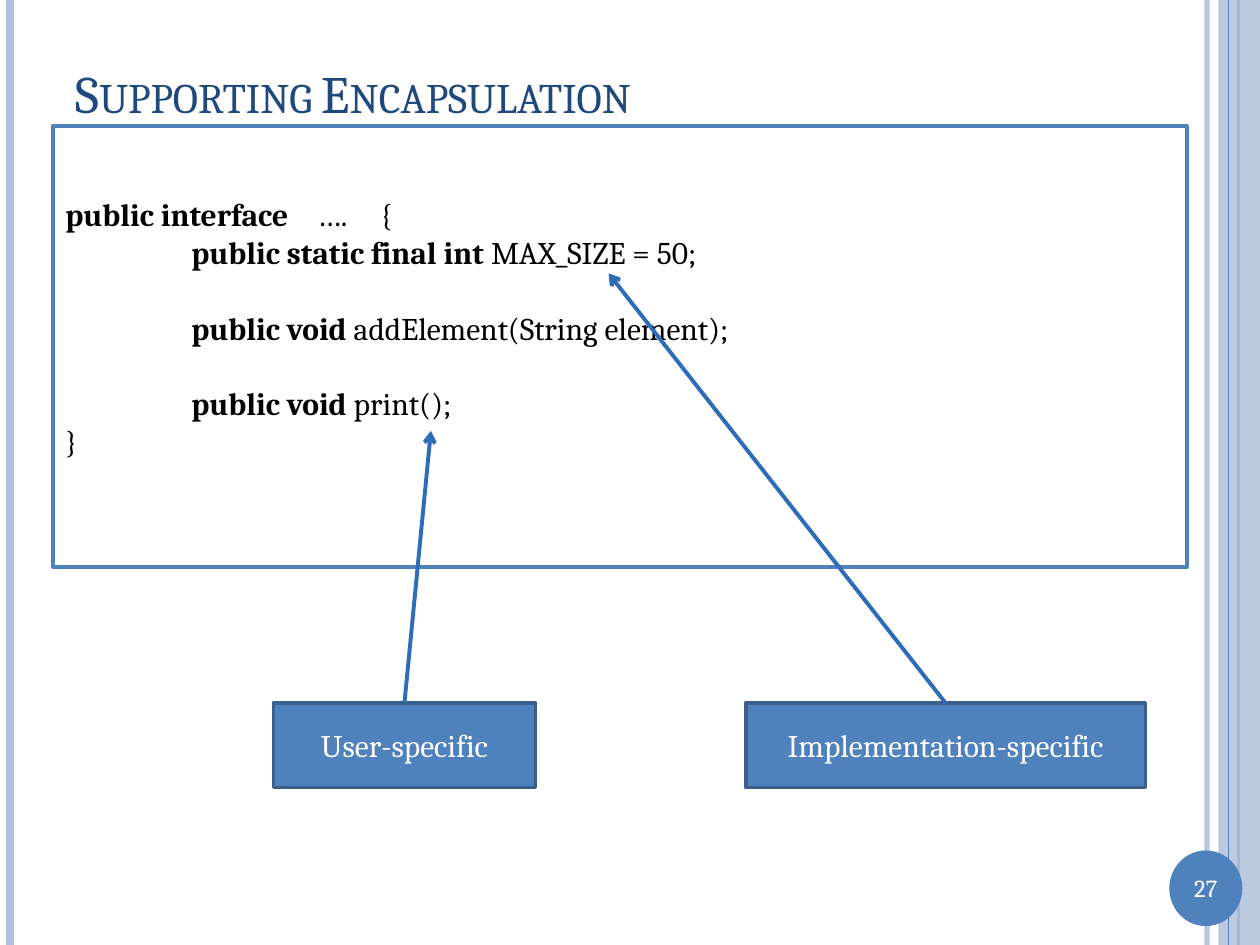
from lxml.etree import SubElement
from pptx import Presentation
from pptx.dml.color import RGBColor
from pptx.enum.shapes import MSO_CONNECTOR as Connector, MSO_SHAPE as Shape
from pptx.enum.text import MSO_ANCHOR as Anchor, MSO_AUTO_SIZE as AutoSize, PP_ALIGN as Align
from pptx.oxml.ns import qn
from pptx.util import Inches, Pt

WHITE = RGBColor(0xFF, 0xFF, 0xFF)
BLACK = RGBColor(0x00, 0x00, 0x00)
NAVY = RGBColor(0x1F, 0x49, 0x7D)
BLUE = RGBColor(0x4F, 0x81, 0xBD)
DARK_BLUE = RGBColor(0x3A, 0x5F, 0x8C)
ARROW_BLUE = RGBColor(0x2C, 0x6C, 0xB9)
PALE_BLUE = RGBColor(0xB3, 0xC1, 0xDB)

LINE_HEIGHT = 21.6


def add_text(paragraph, text, size=18, color=BLACK, bold=False, small_caps=False, font="Cambria"):
    run = paragraph.add_run()
    run.text = text
    run.font.name = font
    run.font.size = Pt(size)
    run.font.bold = bold
    run.font.color.rgb = color
    if small_caps:
        run.font._element.set("cap", "small")


def set_alpha(fill, percent):
    color = fill._xPr.find(qn("a:solidFill"))[0]
    SubElement(color, qn("a:alpha"), val=str(percent * 1000))


def set_tabs(paragraph, positions):
    tabs = SubElement(paragraph._p.get_or_add_pPr(), qn("a:tabLst"))
    for position in positions:
        SubElement(tabs, qn("a:tab"), pos=str(Inches(position)), algn="l")


def set_indent(paragraph, indent):
    properties = paragraph._p.get_or_add_pPr()
    properties.set("marL", str(Inches(indent)))
    properties.set("indent", "0")


class SlideBuilder:
    def __init__(self, presentation):
        self.slide = presentation.slides.add_slide(presentation.slide_layouts[5])

    def title(self, text, left, top, width, height):
        title = self.slide.shapes.title
        title.left, title.top = Inches(left), Inches(top)
        title.width, title.height = Inches(width), Inches(height)
        frame = title.text_frame
        frame.auto_size = AutoSize.NONE
        frame.vertical_anchor = Anchor.MIDDLE
        frame.paragraphs[0].alignment = Align.LEFT
        add_text(frame.paragraphs[0], text, size=30, color=NAVY, small_caps=True)

    def shape(self, kind, left, top, width, height, fill=BLUE, line=None, alpha=None):
        shape = self.slide.shapes.add_shape(
            kind, Inches(left), Inches(top), Inches(width), Inches(height))
        shape.shadow.inherit = False
        shape.fill.solid()
        shape.fill.fore_color.rgb = fill
        if alpha:
            set_alpha(shape.fill, alpha)
        if line is None:
            shape.line.fill.background()
        else:
            shape.line.color.rgb = line
            shape.line.width = Pt(2)
        shape.text_frame.word_wrap = True
        shape.text_frame.vertical_anchor = Anchor.MIDDLE
        return shape

    def label(self, text, left, top, width, height):
        shape = self.shape(Shape.RECTANGLE, left, top, width, height, line=DARK_BLUE)
        paragraph = shape.text_frame.paragraphs[0]
        paragraph.alignment = Align.CENTER
        add_text(paragraph, text, color=WHITE)
        return shape

    def page_number(self, text, left, top, width, height):
        box = self.slide.shapes.add_textbox(
            Inches(left), Inches(top), Inches(width), Inches(height))
        box.text_frame.word_wrap = True
        paragraph = box.text_frame.paragraphs[0]
        paragraph.alignment = Align.CENTER
        add_text(paragraph, text, size=14, color=WHITE)

    def code(self, lines, left, top, width, height):
        shape = self.shape(Shape.RECTANGLE, left, top, width, height, fill=WHITE, line=BLUE)
        frame = shape.text_frame
        frame.margin_bottom = Inches(0.05) + Pt(LINE_HEIGHT)
        for number, (keywords, rest, indent, gap) in enumerate(lines):
            paragraph = frame.add_paragraph() if number else frame.paragraphs[0]
            paragraph.alignment = Align.LEFT
            set_indent(paragraph, indent)
            if gap:
                paragraph.space_before = Pt(LINE_HEIGHT)
            if "\t" in rest:
                set_tabs(paragraph, (2.16, 3.05))
            if keywords:
                add_text(paragraph, keywords, bold=True)
            add_text(paragraph, rest)

    def line(self, start, end, color, width, alpha=None):
        connector = self.slide.shapes.add_connector(
            Connector.STRAIGHT, *(Inches(value) for value in (*start, *end)))
        connector.line.color.rgb = color
        connector.line.width = Pt(width)
        if alpha:
            set_alpha(connector.line.fill, alpha)
        SubElement(connector._element.spPr, qn("a:effectLst"))
        return connector

    def arrow(self, source, start, end):
        connector = self.line(start, end, ARROW_BLUE, 2.25)
        connector.begin_connect(source, 0)
        SubElement(connector.line._get_or_add_ln(), qn("a:tailEnd"), type="arrow")


def main():
    presentation = Presentation()
    presentation.slide_width = Inches(10)
    presentation.slide_height = Inches(7.5)
    builder = SlideBuilder(presentation)

    def rule(x, color, width, alpha=None):
        builder.line((x, 0), (x, 7.5), color, width, alpha)

    rule(9.58, PALE_BLUE, 3, alpha=93)
    rule(0.08, PALE_BLUE, 4.5)
    rule(9.83, BLUE, 1.5)
    builder.shape(Shape.RECTANGLE, 9.67, 0, 0.33, 7.5, fill=PALE_BLUE, alpha=87)
    rule(9.75, BLUE, 0.75)
    builder.shape(Shape.OVAL, 9.28, 6.75, 0.58, 0.6)
    builder.page_number("27", 9.28, 6.88, 0.58, 0.34)

    builder.title("Supporting Encapsulation", 0.5, 0.3, 8.67, 0.87)
    builder.code([
        ("public interface", "\t….\t{", 0, False),
        ("public static final int", " MAX_SIZE = 50;", 1, False),
        ("public void ", "addElement(String element);", 1, True),
        ("public void", " print();", 1, True),
        ("", "}", 0, False),
    ], 0.42, 1, 9, 3.5)

    user = builder.label("User-specific", 2.17, 5.58, 2.08, 0.67)
    implementation = builder.label("Implementation-specific", 5.92, 5.58, 3.17, 0.67)
    builder.arrow(user, (3.21, 5.58), (3.42, 3.42))
    builder.arrow(implementation, (7.5, 5.58), (4.83, 2.17))

    presentation.save("out.pptx")


if __name__ == "__main__":
    main()
